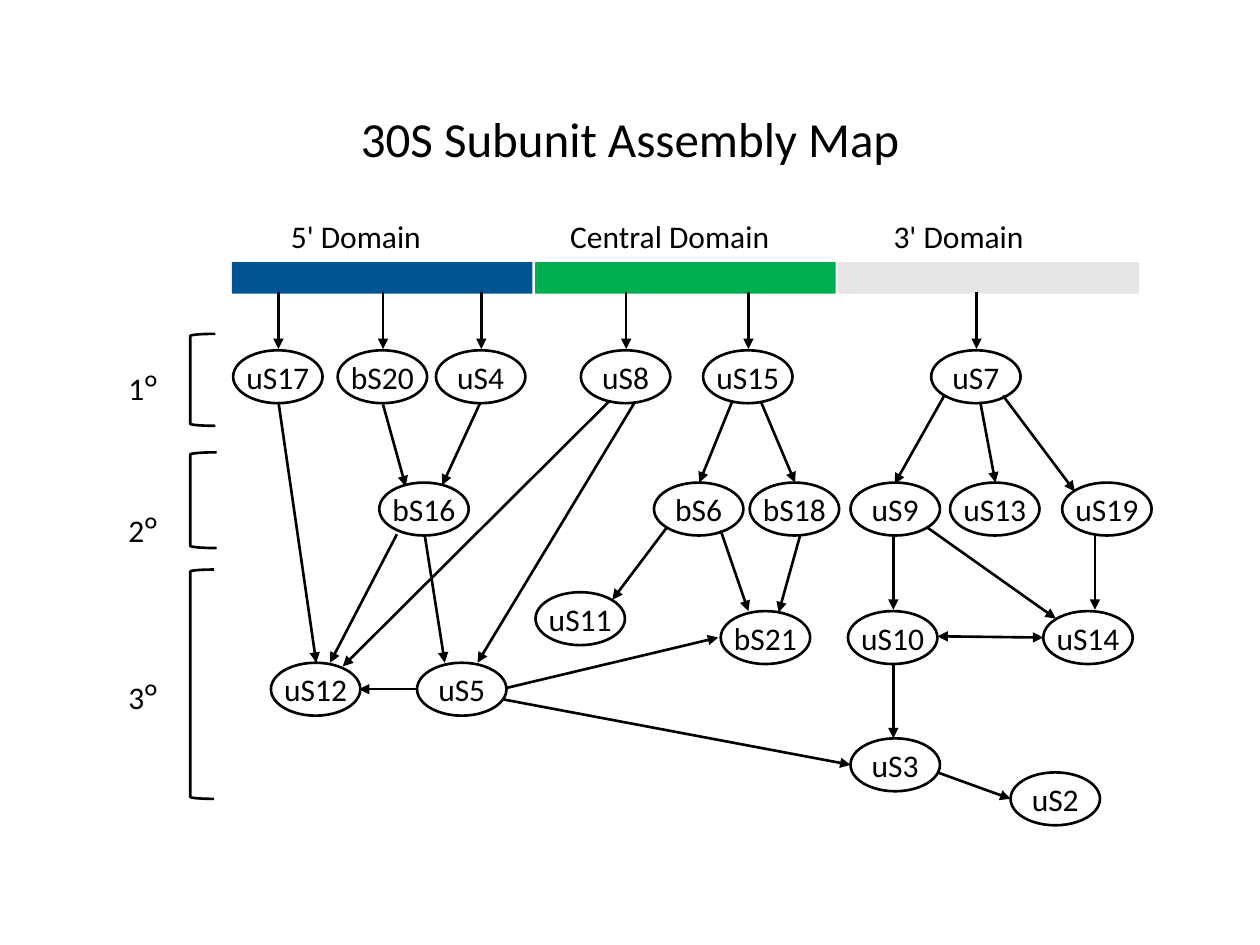
import pptx
import pptx.util
import pptx.dml.color
import pptx.enum.shapes
import pptx.enum.text
from lxml import etree
from pptx.util import Inches

HUES = {"ink": "000000", "blue": "005493", "green": "00B050", "gray": "E7E6E6"}
KIND = pptx.enum.shapes.MSO_SHAPE
ALIGN = pptx.enum.text.PP_ALIGN
MID = pptx.enum.text.MSO_ANCHOR.MIDDLE

DOMAINS = [("5' Domain", "blue", 0.37, 1.25),
           ("Central Domain", "green", 0.18, 1.8),
           ("3' Domain", "gray", 0.34, 1.25)]
RANKS = [("1ᴼ", 0.23, 0, 0.2, 0.73), ("2ᴼ", 1.36, 0.94, 0.21, 0.76),
         ("3ᴼ", 2.68, 1.87, 0.19, 1.82)]
ROWS = {
    0.46: {"uS17": 0, "bS20": 0.83, "uS4": 1.61, "uS8": 2.76, "uS15": 3.73, "uS7": 5.54},
    1.51: {"bS16": 1.16, "bS6": 3.34, "bS18": 4.1, "uS9": 4.9, "uS13": 5.69, "uS19": 6.58},
    2.38: {"uS11": 2.4},
    2.53: {"bS21": 3.87, "uS10": 4.88, "uS14": 6.43},
    2.94: {"uS12": 0.3, "uS5": 1.46},
    3.54: {"uS3": 4.9},
    3.81: {"uS2": 6.17},
}
NODE = (0.71, 0.42)
LINKS = [
    ("bS20", "bS16", 0.36, 0.43, 0.21, 0.03), ("uS4", "bS16", 0.35, 0.42, 0.5, 0.02),
    ("bS16", "uS5", 0.36, 0.41, 0.22, 0), ("bS16", "uS12", 0.14, 0.41, 0.47, 0),
    ("uS17", "uS12", 0.36, 0.41, 0.36, 0), ("uS8", "uS12", 0.22, 0.41, 0.57, 0.03),
    ("uS8", "uS5", 0.43, 0.41, 0.48, 0), ("uS15", "bS6", 0.23, 0.41, 0.36, 0),
    ("uS15", "bS18", 0.46, 0.41, 0.36, 0), ("bS6", "uS11", 0.1, 0.36, 0.61, 0.06),
    ("bS6", "bS21", 0.53, 0.38, 0.22, 0), ("bS18", "bS21", 0.4, 0.42, 0.46, 0.01),
    ("uS5", "bS21", 0.71, 0.2, -0.02, 0.21), ("uS5", "uS3", 0.68, 0.29, 0, 0.21),
    ("uS5", "uS12", 0, 0.21, 0.7, 0.21), ("uS7", "uS9", 0.11, 0.35, 0.35, 0.01),
    ("uS7", "uS13", 0.39, 0.41, 0.36, 0), ("uS7", "uS19", 0.57, 0.36, 0.1, 0.07),
    ("uS9", "uS10", 0.34, 0.41, 0.36, -0.01), ("uS9", "uS14", 0.6, 0.35, 0.1, 0.06),
    ("uS19", "uS14", 0.26, 0.41, 0.41, -0.01), ("uS10", "uS14", 0.71, 0.2, 0, 0.21),
    ("uS10", "uS3", 0.36, 0.41, 0.34, 0), ("uS3", "uS2", 0.69, 0.27, 0, 0.21),
]
MUTUAL = {("uS10", "uS14")}


def tint(name):
    """Return the named colour."""
    return pptx.dml.color.RGBColor.from_string(HUES[name])


def write(shape, text, size=18, align=ALIGN.CENTER):
    """Put one styled line of text in a shape."""
    frame = shape.text_frame
    frame.word_wrap = False
    frame.vertical_anchor = MID
    para = frame.paragraphs[0]
    para.text = text
    para.alignment = align
    para.font.size = pptx.util.Pt(size)
    para.font.name = "Calibri"
    para.font.color.rgb = tint("ink")
    return para


def label(slide, text, x, y, wide):
    """Add a left-aligned label."""
    box = slide.shapes.add_textbox(Inches(x), Inches(y), Inches(wide), Inches(0.4))
    write(box, text, align=ALIGN.LEFT)


def stroke(line):
    """Give a line the common ink and width."""
    line.color.rgb = tint("ink")
    line.width = pptx.util.Pt(1.5)


def draw(slide, kind, x, y, wide, high, fill=None):
    """Add a filled shape without outline, or an outlined one without fill."""
    shape = slide.shapes.add_shape(kind, Inches(x), Inches(y), Inches(wide), Inches(high))
    shape.shadow.inherit = False
    if fill:
        shape.fill.solid()
        shape.fill.fore_color.rgb = tint(fill)
        shape.line.fill.background()
    else:
        shape.fill.background()
        stroke(shape.line)
    return shape


def arrow(slide, x1, y1, x2, y2, both=False):
    """Add an arrow, pointing both ways if asked."""
    link = slide.shapes.add_connector(
        pptx.enum.shapes.MSO_CONNECTOR.STRAIGHT,
        Inches(x1), Inches(y1), Inches(x2), Inches(y2))
    stroke(link.line)
    line = link.line._get_or_add_ln()
    for end in ["headEnd", "tailEnd"] if both else ["tailEnd"]:
        etree.SubElement(line, pptx.oxml.ns.qn("a:" + end), type="triangle")
    etree.SubElement(link._element.spPr, pptx.oxml.ns.qn("a:effectLst"))


def add_title(slide, x, y, wide, high):
    """Add the centred title."""
    box = slide.shapes.add_textbox(Inches(x), Inches(y), Inches(wide), Inches(high))
    para = write(box, "30S Subunit Assembly Map", 28)
    box.text_frame.word_wrap = True
    para.line_spacing = 0.9


def add_bar(slide, x, y, wide, high):
    """Add the domain bar with a label over each part."""
    step = wide / len(DOMAINS)
    for i, (text, fill, shift, span) in enumerate(DOMAINS):
        left = x + i * step
        draw(slide, KIND.RECTANGLE, left, y + 0.41, step - 0.02, high - 0.41, fill)
        label(slide, text, left + shift, y, span)


def add_ranks(slide, x, y):
    """Add the bracketed binding orders."""
    for text, drop, top, wide, high in RANKS:
        label(slide, text, x, y + drop, 0.44)
        draw(slide, KIND.LEFT_BRACKET, x + 0.59, y + top, wide, high)


def add_map(slide, x, y):
    """Add the proteins and the arrows that join them."""
    spots = {name: (x + left, y + top)
             for top, row in ROWS.items() for name, left in row.items()}
    for left in ROWS[0.46].values():
        arrow(slide, x + left + 0.36, y, x + left + 0.36, y + 0.45)
    for start, end, dx1, dy1, dx2, dy2 in LINKS:
        (x1, y1), (x2, y2) = spots[start], spots[end]
        arrow(slide, x1 + dx1, y1 + dy1, x2 + dx2, y2 + dy2, (start, end) in MUTUAL)
    for name, (left, top) in spots.items():
        node = draw(slide, KIND.OVAL, left, top, *NODE)
        frame = node.text_frame
        frame.margin_left = frame.margin_right = 0
        write(node, name)


def main():
    """Build and save the slide."""
    deck = pptx.Presentation()
    deck.slide_width, deck.slide_height = Inches(10), Inches(7.5)
    slide = deck.slides.add_slide(deck.slide_layouts[6])
    add_title(slide, 0.69, 0.4, 8.62, 1.45)
    add_bar(slide, 1.84, 1.67, 7.22, 0.66)
    add_ranks(slide, 0.92, 2.65)
    add_map(slide, 1.85, 2.32)
    deck.save("out.pptx")


if __name__ == "__main__":
    main()
